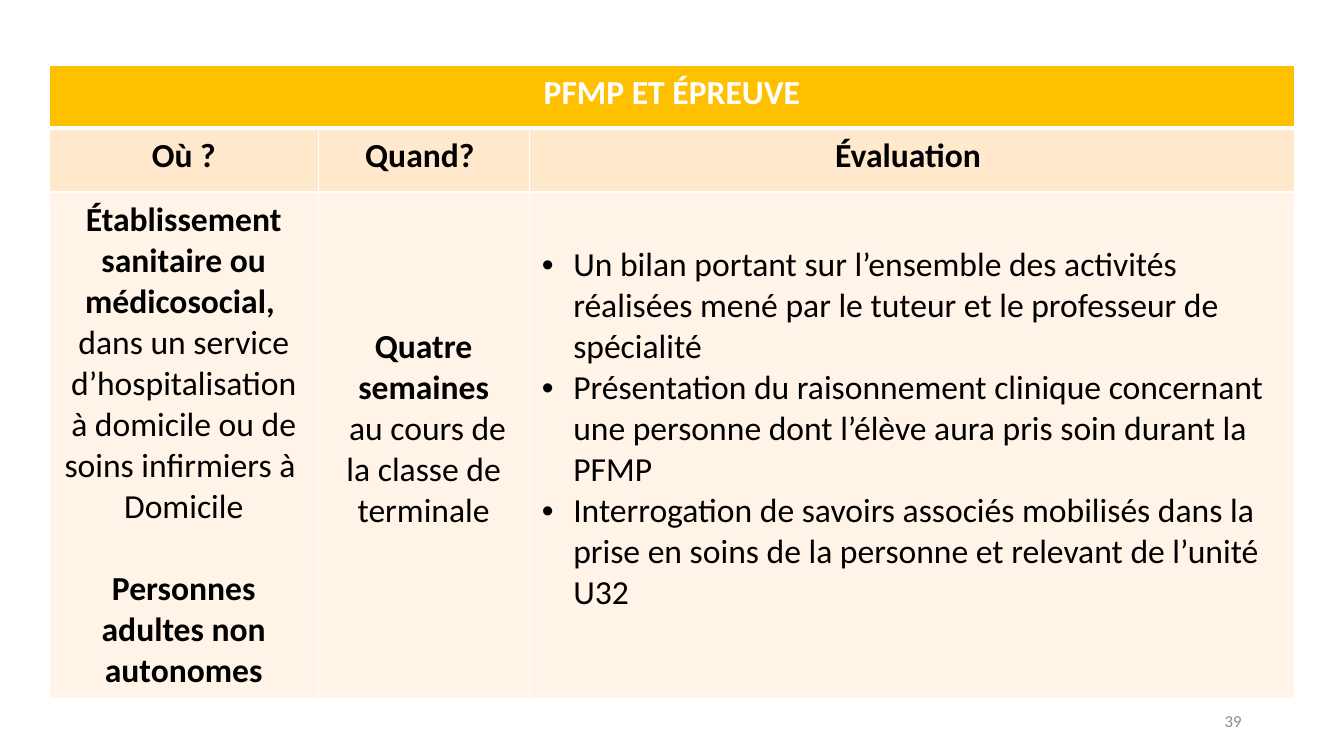
from lxml.etree import SubElement
from pptx import Presentation
from pptx.dml.color import RGBColor
from pptx.enum.text import MSO_ANCHOR, PP_ALIGN
from pptx.oxml.ns import qn
from pptx.util import Pt

PX = 9525  # 96 px to the inch
WHITE = RGBColor(0xFF, 0xFF, 0xFF)
BLACK = RGBColor(0x00, 0x00, 0x00)
GREY = RGBColor(0x8C, 0x8C, 0x8C)
AMBER = RGBColor(0xFF, 0xC0, 0x00)
PEACH = RGBColor(0xFF, 0xE8, 0xCC)
CREAM = RGBColor(0xFF, 0xF4, 0xE7)

TITLE = "PFMP ET ÉPREUVE"
HEADINGS = ["Où ?", "Quand? ", "Évaluation "]
PLACE = [
    ("Établissement sanitaire ou médicosocial, ", dict(bold=True)),
    ("dans un service d’hospitalisation à domicile ou de soins infirmiers à ", {}),
    ("Domicile", {}),
    ("Personnes adultes non autonomes", dict(bold=True, before=29.3)),
]
PERIOD = [
    ("Quatre semaines", dict(bold=True)),
    (" au cours de la classe de terminale", {}),
]
ASSESSMENT = [(text, dict(bullet=True, align=PP_ALIGN.LEFT)) for text in (
    "Un bilan portant sur l’ensemble des activités réalisées mené par le tuteur "
    "et le professeur de spécialité",
    "Présentation du raisonnement clinique concernant une personne dont l’élève "
    "aura pris soin durant la PFMP",
    "Interrogation de savoirs associés mobilisés dans la prise en soins de la "
    "personne et relevant de l’unité U32",
)]


def write(p, text, font="Calibri", size=24, color=BLACK, bold=False,
          align=PP_ALIGN.CENTER, before=0, bullet=False):
    if bullet:
        pPr = p._p.get_or_add_pPr()
        pPr.set("marL", str(30 * PX))
        pPr.set("indent", str(-30 * PX))
        SubElement(pPr, qn("a:buFont"), typeface="Arial")
        SubElement(pPr, qn("a:buChar"), char="•")
    p.alignment = align
    if before:
        p.space_before = Pt(before)
    r = p.add_run()
    r.text = text
    r.font.name, r.font.size, r.font.bold = font, Pt(size), bold
    r.font.color.rgb = color


def set_borders(cell, color=WHITE, bottom=1):
    """Line widths are in points."""
    tcPr = cell._tc.get_or_add_tcPr()
    for side, width in zip("LRTB", (1, 1, 1, bottom)):
        ln = SubElement(tcPr, qn(f"a:ln{side}"), w=str(Pt(width)))
        fill = SubElement(ln, qn("a:solidFill"))
        SubElement(fill, qn("a:srgbClr"), val=str(color))


class Deck:
    def __init__(self, width, height):
        self.prs = Presentation()
        self.prs.slide_width, self.prs.slide_height = width * PX, height * PX
        self.s = self.prs.slides.add_slide(self.prs.slide_layouts[6])

    def table(self, x, y, widths, heights):
        frame = self.s.shapes.add_table(
            len(heights), len(widths), x * PX, y * PX,
            sum(widths) * PX, sum(heights) * PX)
        table = frame.table
        for column, width in zip(table.columns, widths):
            column.width = width * PX
        for row, height in zip(table.rows, heights):
            row.height = height * PX
        return table

    def cell(self, cell, paragraphs, fill, anchor=MSO_ANCHOR.TOP,
             margin_bottom=7, **borders):
        set_borders(cell, **borders)
        cell.fill.solid()
        cell.fill.fore_color.rgb = fill
        cell.margin_left = cell.margin_right = 12 * PX
        cell.margin_top, cell.margin_bottom = 7 * PX, margin_bottom * PX
        cell.vertical_anchor = anchor
        tf = cell.text_frame
        for i, (text, style) in enumerate(paragraphs):
            write(tf.add_paragraph() if i else tf.paragraphs[0], text, **style)

    def text(self, x, y, width, height, text, **style):
        box = self.s.shapes.add_textbox(x * PX, y * PX, width * PX, height * PX)
        tf = box.text_frame
        tf.word_wrap = True
        tf.vertical_anchor = MSO_ANCHOR.MIDDLE
        write(tf.paragraphs[0], text, **style)


def main():
    deck = Deck(1280, 720)
    table = deck.table(47, 62, [256, 201, 729], [60, 61, 473])
    table.cell(0, 0).merge(table.cell(0, 2))
    title = [(TITLE, dict(bold=True, color=WHITE))]
    for col, (heading, body) in enumerate(zip(HEADINGS, (PLACE, PERIOD, ASSESSMENT))):
        deck.cell(table.cell(0, col), [] if col else title, AMBER, bottom=3)
        deck.cell(table.cell(1, col), [(heading, dict(bold=True))], PEACH)
        deck.cell(table.cell(2, col), body, CREAM, MSO_ANCHOR.MIDDLE,
                  margin_bottom=39 if col else 7)
    deck.text(904, 667, 288, 38, "39", size=12, color=GREY, align=PP_ALIGN.RIGHT)
    deck.prs.save("out.pptx")


if __name__ == "__main__":
    main()
